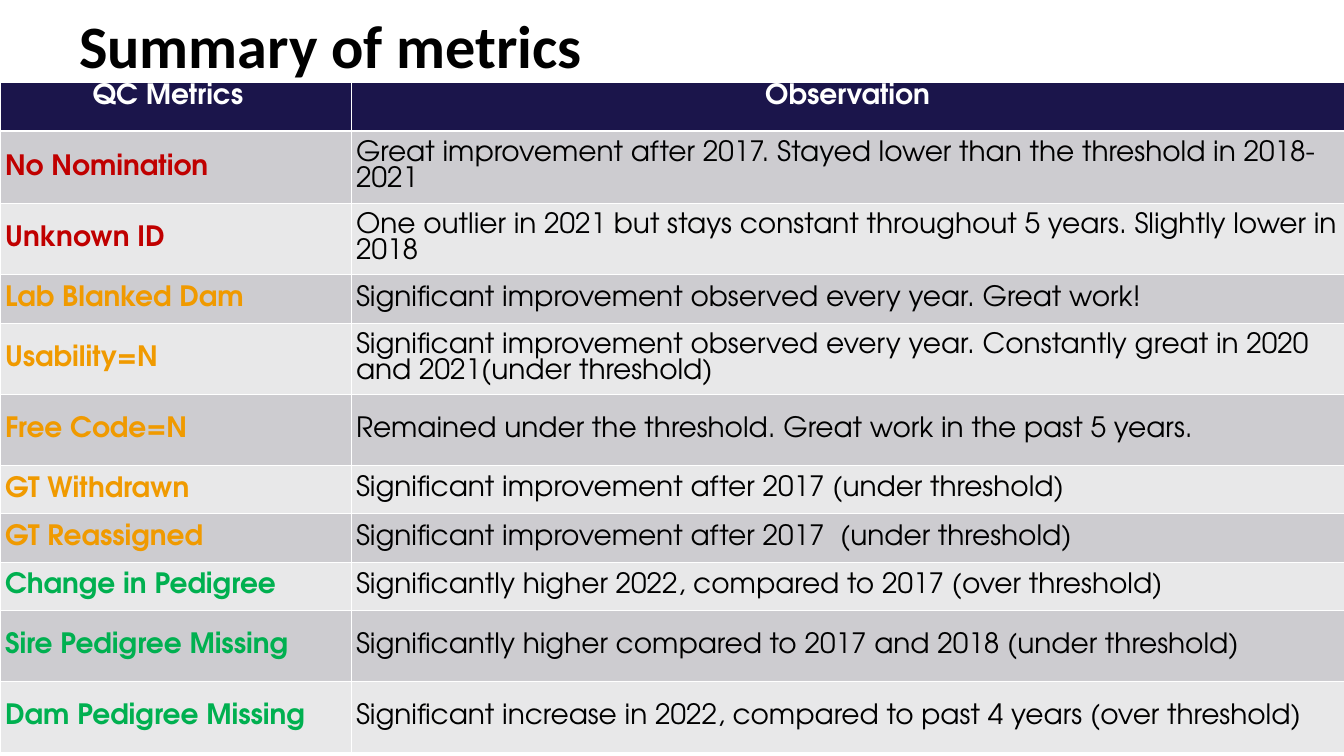
from lxml.etree import SubElement
from pptx import Presentation
from pptx.dml.color import RGBColor
from pptx.enum.text import MSO_ANCHOR, MSO_AUTO_SIZE, PP_ALIGN
from pptx.oxml.ns import qn
from pptx.util import Emu, Pt

EMU_PER_PX = 9144
BLACK, WHITE, NAVY = "000000", "FFFFFF", "1B154B"
RED, ORANGE, GREEN = "C00000", "F09A00", "00B050"
BANDS = ["CDCCD0", "E8E8E9"]

COLUMN_WIDTHS = [696, 1969]
HEADER_HEIGHT = 96
HEADERS = ["QC Metrics", "Observation"]
METRICS = [
    ("No Nomination", RED, 144,
     "Great improvement after 2017. Stayed lower than the threshold in 2018-2021"),
    ("Unknown ID", RED, 141,
     "One outlier in 2021 but stays constant throughout 5 years. Slightly lower in 2018"),
    ("Lab Blanked Dam", ORANGE, 96,
     "Significant improvement observed every year. Great work!"),
    ("Usability=N", ORANGE, 141,
     "Significant improvement observed every year. Constantly great in 2020 and 2021(under threshold)"),
    ("Free Code=N", ORANGE, 141,
     "Remained under the threshold. Great work in the past 5 years."),
    ("GT Withdrawn", ORANGE, 96,
     "Significant improvement after 2017 (under threshold)"),
    ("GT Reassigned", ORANGE, 96,
     "Significant improvement after 2017  (under threshold)"),
    ("Change in Pedigree", GREEN, 96,
     "Significantly higher 2022, compared to 2017 (over threshold)"),
    ("Sire Pedigree Missing", GREEN, 141,
     "Significantly higher compared to 2017 and 2018 (under threshold)"),
    ("Dam Pedigree Missing", GREEN, 141,
     "Significant increase in 2022, compared to past 4 years (over threshold)"),
]


def px(length):
    return Emu(length * EMU_PER_PX)


def color(value):
    return RGBColor.from_string(value)


class SlideBuilder:
    title_font, title_size = "Calibri", 86
    table_font, table_size = "TeX Gyre Adventor", 40

    def __init__(self, deck):
        self.slide = deck.slides.add_slide(deck.slide_layouts[5])

    def style(self, para, font, size, ink, bold, align):
        para.alignment = align
        para.font.name = font
        para.font.size = Pt(size)
        para.font.bold = bold
        para.font.color.rgb = color(ink)

    def title(self, text, left, top, width, height):
        box = self.slide.shapes.title
        box.left, box.top, box.width, box.height = map(px, (left, top, width, height))
        frame = box.text_frame
        frame.text = text
        frame.word_wrap = True
        frame.auto_size = MSO_AUTO_SIZE.NONE
        frame.vertical_anchor = MSO_ANCHOR.BOTTOM
        frame.margin_left = frame.margin_right = px(24)
        frame.margin_top = frame.margin_bottom = px(12)
        self.style(frame.paragraphs[0], self.title_font, self.title_size,
                   BLACK, True, PP_ALIGN.LEFT)

    def table(self, left, top, widths, heights):
        frame = self.slide.shapes.add_table(
            len(heights), len(widths), px(left), px(top),
            px(sum(widths)), px(sum(heights)))
        table = frame.table
        for column, width in zip(table.columns, widths):
            column.width = px(width)
        for row, height in zip(table.rows, heights):
            row.height = px(height)
        return table

    def borders(self, cell, top, bottom):
        properties = cell._tc.get_or_add_tcPr()
        for side, points in (("L", 1), ("R", 1), ("T", top), ("B", bottom)):
            line = SubElement(properties, qn(f"a:ln{side}"), w=str(Pt(points)))
            fill = SubElement(line, qn("a:solidFill"))
            SubElement(fill, qn("a:srgbClr"), val=WHITE)

    def cell(self, cell, text, ink, fill, bold=False, align=PP_ALIGN.LEFT,
             anchor=MSO_ANCHOR.MIDDLE, top=1, bottom=1, margin_right=10):
        self.borders(cell, top, bottom)
        cell.fill.solid()
        cell.fill.fore_color.rgb = color(fill)
        cell.vertical_anchor = anchor
        cell.margin_left, cell.margin_right = px(10), px(margin_right)
        cell.margin_top = cell.margin_bottom = px(2)
        cell.text = text
        self.style(cell.text_frame.paragraphs[0], self.table_font,
                   self.table_size, ink, bold, align)


def main():
    deck = Presentation()
    deck.slide_width, deck.slide_height = px(2665), px(1500)
    page = SlideBuilder(deck)
    page.title("Summary of metrics", 133, -120, 2398, 292)

    heights = [HEADER_HEIGHT] + [height for _, _, height, _ in METRICS]
    table = page.table(0, 164, COLUMN_WIDTHS, heights)
    for column, (header, margin) in enumerate(zip(HEADERS, (40, 10))):
        page.cell(table.cell(0, column), header, WHITE, NAVY, bold=True,
                  align=PP_ALIGN.CENTER, anchor=MSO_ANCHOR.TOP,
                  bottom=3, margin_right=margin)
    for row, (metric, ink, _, observation) in enumerate(METRICS, start=1):
        band = BANDS[(row - 1) % 2]
        top = 3 if row == 1 else 1
        page.cell(table.cell(row, 0), metric, ink, band, bold=True, top=top)
        page.cell(table.cell(row, 1), observation, BLACK, band, top=top)

    deck.save("out.pptx")


if __name__ == "__main__":
    main()
